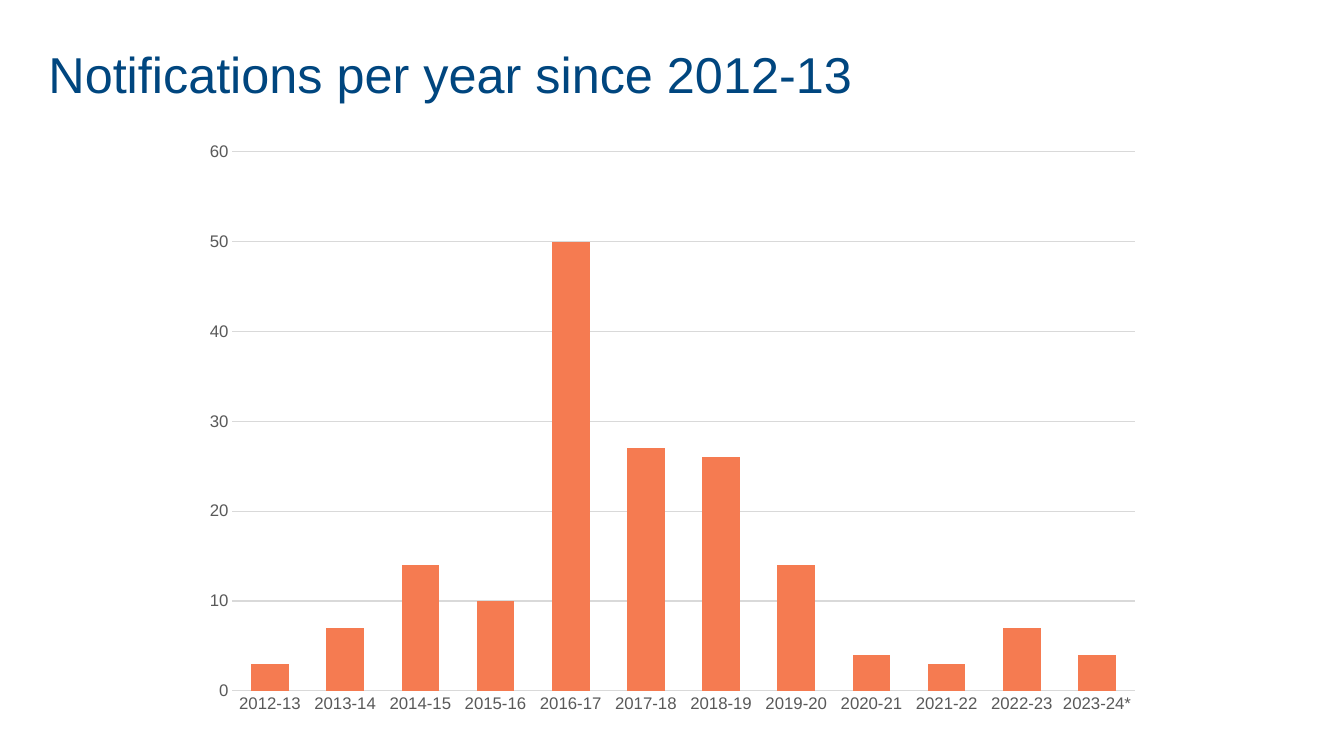
"""Build a slide with a column chart of notifications per year."""
from pptx import Presentation
from pptx.chart.data import CategoryChartData
from pptx.dml.color import RGBColor
from pptx.enum.chart import XL_CHART_TYPE, XL_TICK_MARK
from pptx.enum.text import MSO_ANCHOR
from pptx.util import Cm, Pt

COLUMNS = XL_CHART_TYPE.COLUMN_CLUSTERED
NO_TICK = XL_TICK_MARK.NONE
MIDDLE = MSO_ANCHOR.MIDDLE

FONT = "Arial"
COLORS = {"title": "00467F", "bar": "F57B51", "label": "595959", "grid": "D9D9D9"}
NOTIFICATIONS = {
    "2012-13": 3, "2013-14": 7, "2014-15": 14, "2015-16": 10,
    "2016-17": 50, "2017-18": 27, "2018-19": 26, "2019-20": 14,
    "2020-21": 4, "2021-22": 3, "2022-23": 7, "2023-24*": 4,
}


def add_text(s, text, left, top, width, height, size, color):
    """Add a one-paragraph text box, anchored in the middle."""
    tf = s.shapes.add_textbox(Cm(left), Cm(top), Cm(width), Cm(height)).text_frame
    tf.word_wrap = True
    tf.vertical_anchor = MIDDLE
    p = tf.paragraphs[0]
    p.line_spacing = 0.9
    r = p.add_run()
    r.text = text
    r.font.name = FONT
    r.font.size = Pt(size)
    r.font.color.rgb = RGBColor.from_string(COLORS[color])


prs = Presentation()
prs.slide_width, prs.slide_height = Cm(33.87), Cm(19.05)
s = prs.slides.add_slide(prs.slide_layouts[6])

add_text(s, "Notifications per year since 2012-13", left=0.97, top=0.76,
         width=31.93, height=2.39, size=36, color="title")

data = CategoryChartData()
data.categories = list(NOTIFICATIONS)
data.add_series("Series 1", list(NOTIFICATIONS.values()))
chart = s.shapes.add_chart(COLUMNS, Cm(4.8), Cm(3.3), Cm(24.28), Cm(14.96), data).chart
chart.has_title = False
chart.has_legend = False
chart.font.name = FONT
chart.font.size = Pt(12)

plot = chart.plots[0]
plot.gap_width = 100
plot.overlap = -27
plot.vary_by_categories = False
fill = plot.series[0].format.fill
fill.solid()
fill.fore_color.rgb = RGBColor.from_string(COLORS["bar"])

for axis in (chart.category_axis, chart.value_axis):
    axis.major_tick_mark = axis.minor_tick_mark = NO_TICK
    font = axis.tick_labels.font
    font.name = FONT
    font.size = Pt(12)
    font.color.rgb = RGBColor.from_string(COLORS["label"])

value_axis = chart.value_axis
value_axis.minimum_scale, value_axis.maximum_scale = 0, 60
value_axis.major_unit = 10
value_axis.has_major_gridlines = True
value_axis.format.line.fill.background()
for line in (chart.category_axis.format.line, value_axis.major_gridlines.format.line):
    line.width = Pt(0.75)
    line.color.rgb = RGBColor.from_string(COLORS["grid"])

prs.save("out.pptx")
